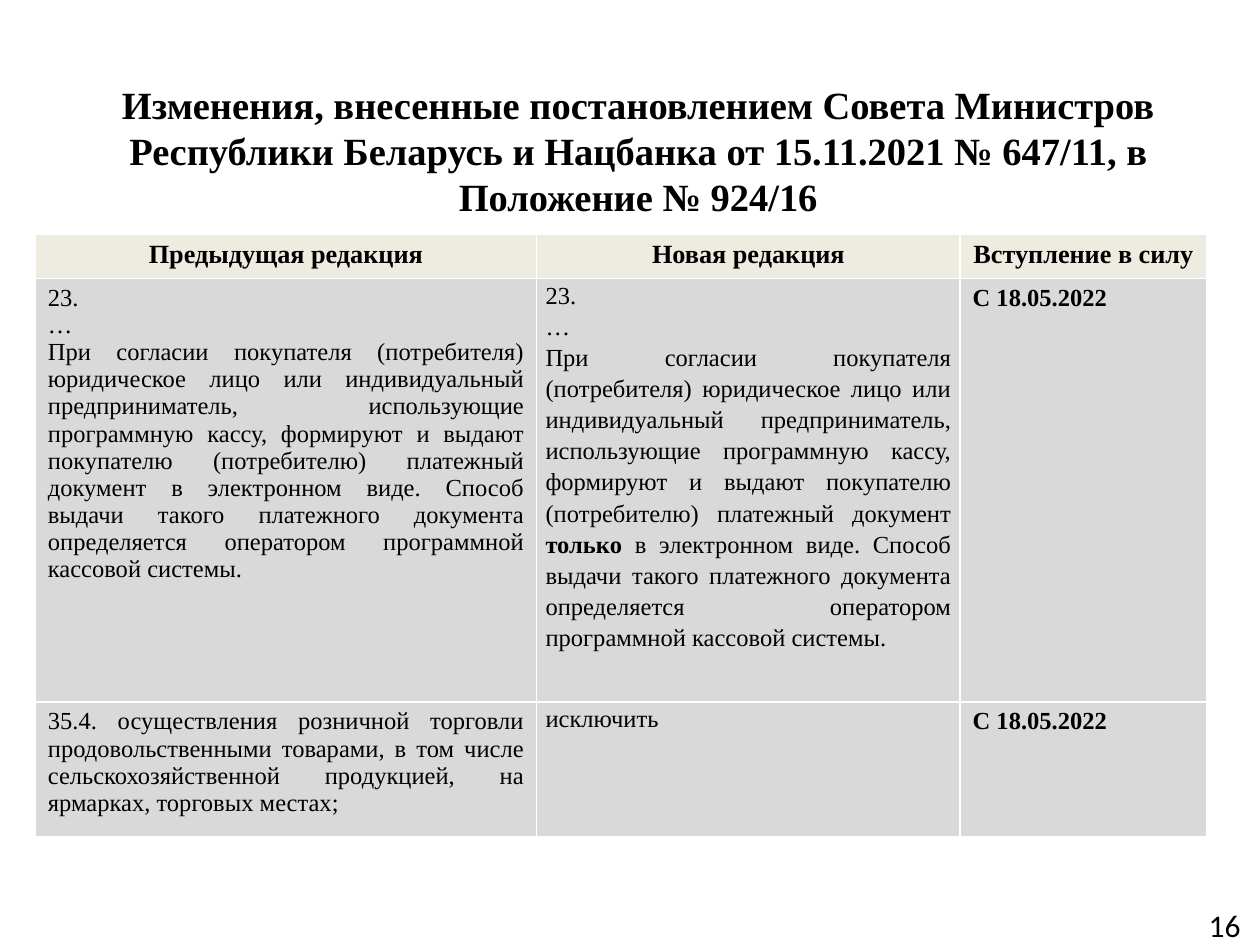
"""Build the slide that compares the old and new wording of Regulation 924/16."""
import pptx
import pptx.dml.color
import pptx.enum.text
import pptx.util

Inches = pptx.util.Inches
Pt = pptx.util.Pt
Align = pptx.enum.text.PP_ALIGN
Anchor = pptx.enum.text.MSO_ANCHOR
BLACK = pptx.dml.color.RGBColor(0x00, 0x00, 0x00)
CREAM = pptx.dml.color.RGBColor(0xEE, 0xEC, 0xE1)
GREY = pptx.dml.color.RGBColor(0xD9, 0xD9, 0xD9)
SERIF = "Times New Roman"


def style(para, size, bold, align, face=SERIF):
    para.alignment = align
    para.font.name = face
    para.font.size = Pt(size)
    para.font.bold = bold
    para.font.color.rgb = BLACK


deck = pptx.Presentation()
deck.slide_width = Inches(10)
deck.slide_height = Inches(7.5)
slide = deck.slides.add_slide(deck.slide_layouts[5])

title = slide.shapes.title
title.left, title.top = Inches(0.41), Inches(0.6)
title.width, title.height = Inches(9.31), Inches(1.18)
title.text_frame.text = (
    "Изменения, внесенные постановлением Совета Министров Республики Беларусь "
    "и Нацбанка от 15.11.2021 № 647/11, в Положение № 924/16"
)
title.text_frame.vertical_anchor = Anchor.MIDDLE
style(title.text_frame.paragraphs[0], 22, True, Align.CENTER)

number = slide.shapes.add_textbox(Inches(9.44), Inches(7.18), Inches(0.56), Inches(0.32))
number.text_frame.word_wrap = True
number.text_frame.vertical_anchor = Anchor.MIDDLE
number.text_frame.text = "16"
style(number.text_frame.paragraphs[0], 18, False, Align.CENTER, "Calibri")

start = (
    "При согласии покупателя (потребителя) юридическое лицо или индивидуальный "
    "предприниматель, использующие программную кассу, формируют и выдают "
    "покупателю (потребителю) платежный документ "
)
end = (
    "в электронном виде. Способ выдачи такого платежного документа "
    "определяется оператором программной кассовой системы."
)
date = "С 18.05.2022"
rows = [
    [["Предыдущая редакция"], ["Новая редакция"], ["Вступление в силу"]],
    [["23.", "…", start + end], ["23.", "…", start + "*только* " + end], [date]],
    [
        [
            "35.4. осуществления розничной торговли продовольственными товарами, "
            "в том числе сельскохозяйственной продукцией, на ярмарках, торговых местах;"
        ],
        ["исключить"],
        [date],
    ],
]
widths = [3.98, 3.36, 1.96]
heights = [0.34, 3.36, 1.07]

table = slide.shapes.add_table(
    len(rows), len(widths), Inches(0.28), Inches(1.86),
    Inches(sum(widths)), Inches(sum(heights)),
).table
for column, width in zip(table.columns, widths):
    column.width = Inches(width)

for r, (row, height) in enumerate(zip(rows, heights)):
    table.rows[r].height = Inches(height)
    for c, lines in enumerate(row):
        cell = table.cell(r, c)
        cell.fill.solid()
        cell.fill.fore_color.rgb = GREY if r else CREAM
        revised = r > 0 and c == 1
        if revised:
            cell.margin_left = cell.margin_right = Inches(0.07)
            cell.margin_top = cell.margin_bottom = 0
        for i, line in enumerate(lines):
            frame = cell.text_frame
            para = frame.add_paragraph() if i else frame.paragraphs[0]
            if r == 0:
                style(para, 15, True, Align.CENTER)
            elif c == 2:
                style(para, 14, True, Align.LEFT)
            else:
                style(para, 14, False, Align.JUSTIFY)
            if revised:
                para.line_spacing = 1.15
            for k, part in enumerate(line.split("*")):
                run = para.add_run()
                run.text = part
                if k % 2:
                    run.font.bold = True

deck.save("out.pptx")
